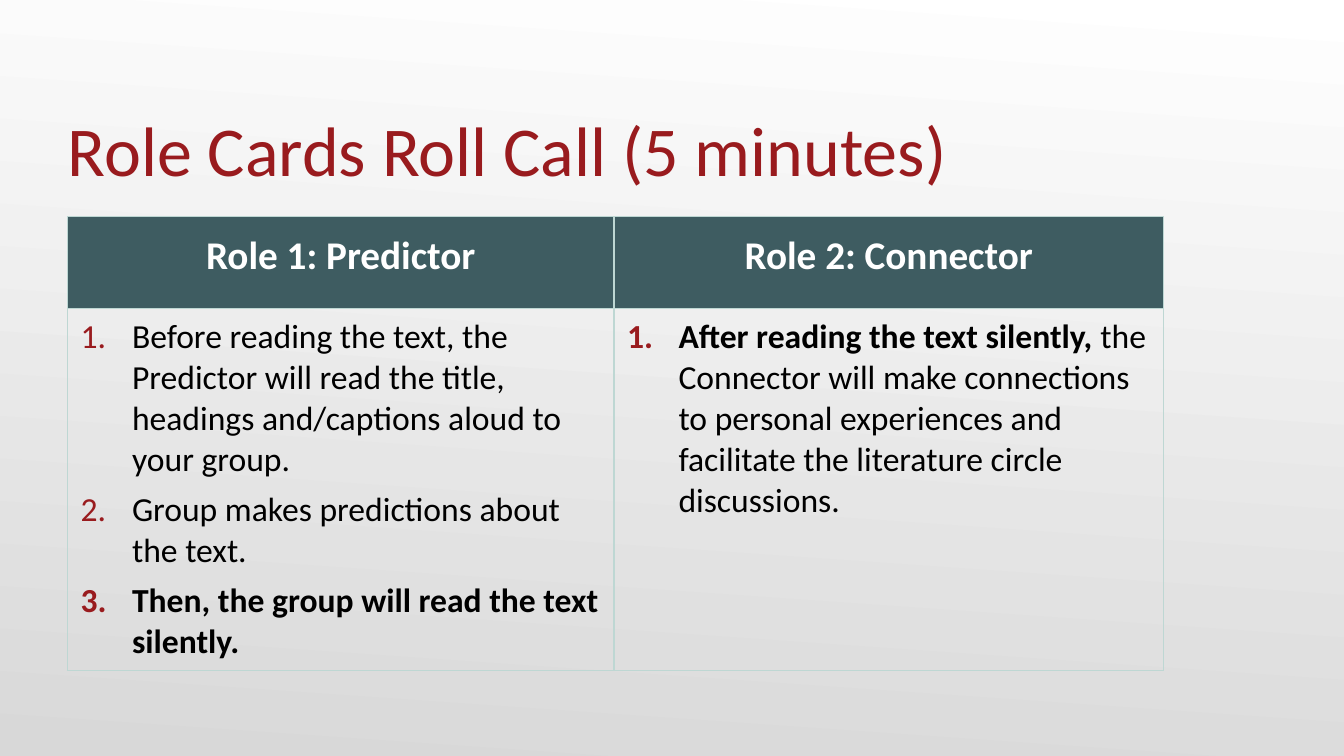
from lxml.etree import SubElement
from pptx import Presentation
from pptx.dml.color import RGBColor
from pptx.enum.text import MSO_ANCHOR as Anchor, MSO_AUTO_SIZE as AutoSize, PP_ALIGN as Align
from pptx.oxml.ns import qn
from pptx.util import Inches, Pt

COLORS = {
    "red": "991B1E",
    "teal": "3E5C61",
    "border": "BED7D3",
    "white": "FFFFFF",
    "gray": "D8D8D8",
    "black": "000000",
}
ROLES = [
    ("Role 1: Predictor", [
        [("Before reading the text, the Predictor will read the title, headings "
          "and/captions aloud to your group.", False)],
        [("Group makes predictions about the text.", False)],
        [("Then, the group will read the text silently.", True)],
    ]),
    ("Role 2: Connector", [
        [("After reading the text silently, ", True),
         ("the Connector will make connections to personal experiences and "
          "facilitate the literature circle discussions.", False)],
    ]),
]


class RolePage:
    """Holds the style and the current slide."""

    def __init__(self, deck, font="Calibri"):
        """Add a title-only slide to the deck."""
        self.page = deck.slides.add_slide(deck.slide_layouts[5])
        self.font = font

    def style(self, font, size, color, bold=None):
        """Set the look of a paragraph's font."""
        font.name, font.size, font.bold = self.font, Pt(size), bold
        font.color.rgb = RGBColor.from_string(COLORS[color])

    def background(self, start, end, angle):
        """Fill the page with a two-colour gradient."""
        fill = self.page.background.fill
        fill.gradient()
        fill.gradient_angle = 360 - angle
        for stop, color in zip(fill.gradient_stops, (start, end)):
            stop.color.rgb = RGBColor.from_string(COLORS[color])

    def title(self, text, left, top, width, height):
        """Place the title at the bottom of its box."""
        box = self.page.shapes.title
        box.left, box.top = Inches(left), Inches(top)
        box.width, box.height = Inches(width), Inches(height)
        frame = box.text_frame
        frame.text = text
        frame.auto_size = AutoSize.NONE
        frame.vertical_anchor = Anchor.BOTTOM
        frame.margin_left = frame.margin_right = frame.margin_bottom = 0
        para = frame.paragraphs[0]
        para.alignment = Align.LEFT
        self.style(para.font, 50, "red")

    def borders(self, cell):
        """Draw a thin line on each side of a cell."""
        props = cell._tc.get_or_add_tcPr()
        for index, side in enumerate(("a:lnL", "a:lnR", "a:lnT", "a:lnB")):
            line = SubElement(props, qn(side), w=str(Pt(1)))
            fill = SubElement(line, qn("a:solidFill"))
            SubElement(fill, qn("a:srgbClr"), val=COLORS["border"])
            props.insert(index, line)

    def header(self, cell, text):
        """Write a centred role name on a solid fill."""
        cell.fill.solid()
        cell.fill.fore_color.rgb = RGBColor.from_string(COLORS["teal"])
        cell.text = text
        para = cell.text_frame.paragraphs[0]
        para.alignment = Align.CENTER
        para.line_spacing = 1.15
        self.style(para.font, 28, "white", True)

    def number(self, para):
        """Give a paragraph a red automatic number and a hanging indent."""
        props = para._p.get_or_add_pPr()
        props.set("marL", str(Inches(0.56)))
        props.set("indent", str(Inches(-0.51)))
        color = SubElement(props, qn("a:buClr"))
        SubElement(color, qn("a:srgbClr"), val=COLORS["red"])
        SubElement(props, qn("a:buAutoNum"), type="arabicPeriod")

    def steps(self, cell, steps):
        """Write the numbered steps of a role."""
        cell.fill.background()
        frame = cell.text_frame
        for index, spans in enumerate(steps):
            para = frame.add_paragraph() if index else frame.paragraphs[0]
            self.number(para)
            para.space_before = Pt(6.4 if index else 0)
            same = len(spans) == 1
            self.style(para.font, 24, "black", spans[0][1] if same else None)
            for text, bold in spans:
                span = para.add_run()
                span.text = text
                if not same:
                    span.font.bold = bold

    def table(self, roles, left, top, widths, heights):
        """Lay out one column for each role."""
        box = self.page.shapes.add_table(
            len(heights), len(widths), Inches(left), Inches(top),
            Inches(sum(widths)), Inches(sum(heights)))
        table = box.table
        table.first_row = table.horz_banding = False
        for row, height in zip(table.rows, heights):
            row.height = Inches(height)
        for index, (name, steps) in enumerate(roles):
            table.columns[index].width = Inches(widths[index])
            self.header(table.cell(0, index), name)
            self.steps(table.cell(1, index), steps)
        for cell in table.iter_cells():
            cell.margin_left = cell.margin_right = Inches(0.08)
            cell.margin_top = cell.margin_bottom = Inches(0.08)
            self.borders(cell)


def main():
    """Build and save the deck."""
    deck = Presentation()
    deck.slide_width, deck.slide_height = Inches(13.33), Inches(7.5)
    page = RolePage(deck)
    page.background("white", "gray", 94)
    page.title("Role Cards Roll Call (5 minutes)", 0.67, 0.77, 12, 1.12)
    page.table(ROLES, 0.67, 2.15, (5.42, 5.45), (0.91, 3.53))
    deck.save("out.pptx")


if __name__ == "__main__":
    main()
